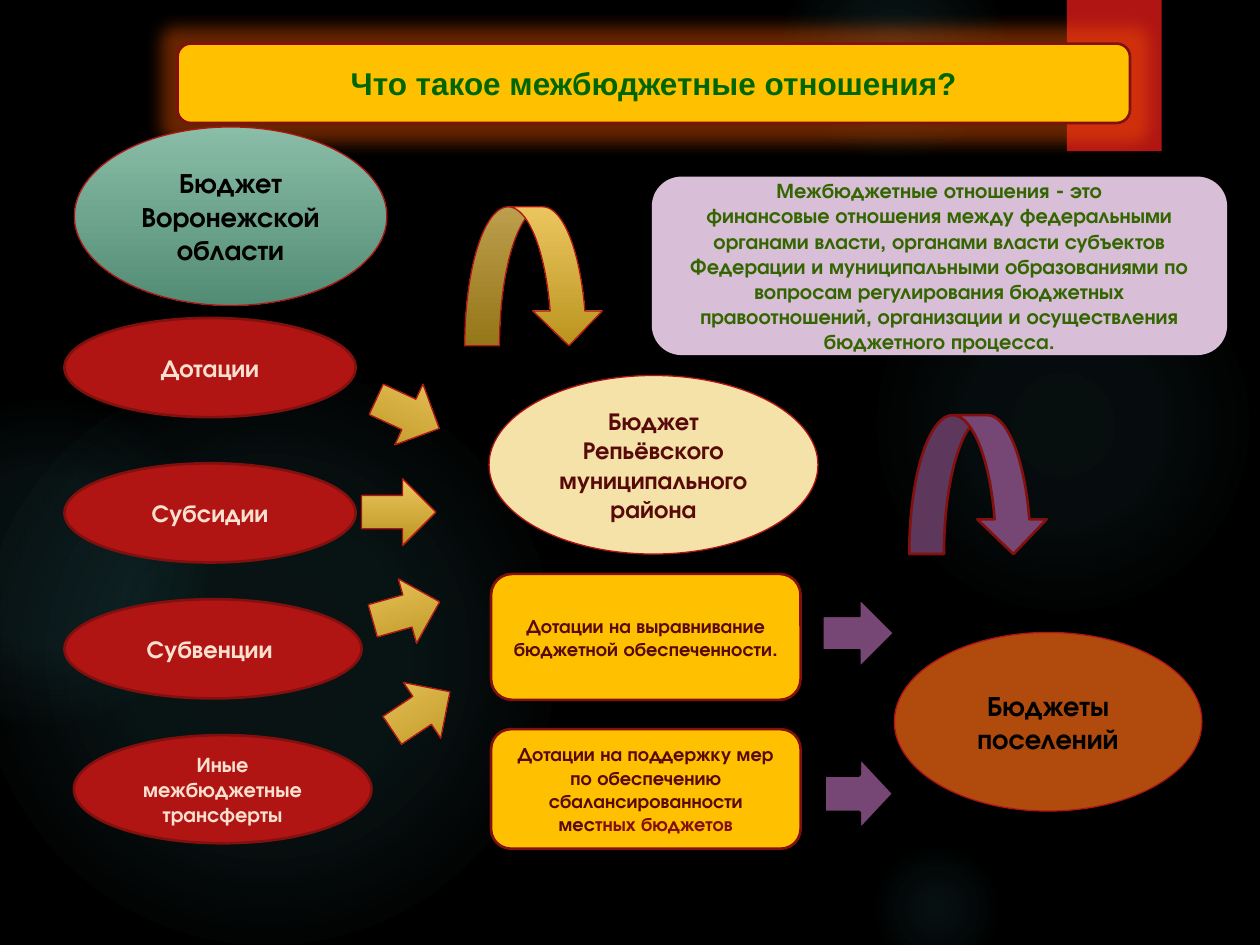
"""Build a slide that explains inter-budget relations."""
import dataclasses

import lxml.etree
import pptx
import pptx.dml.color
import pptx.enum.shapes
import pptx.enum.text
import pptx.oxml.ns
import pptx.util

Cm = pptx.util.Cm
Pt = pptx.util.Pt
SHAPE = pptx.enum.shapes.MSO_SHAPE
qn = pptx.oxml.ns.qn
NBSP = chr(160)


@dataclasses.dataclass(frozen=True)
class Theme:
    title_font: str = "Arial"
    body_font: str = "TeX Gyre Adventor"
    title_size: int = 18
    large: int = 16
    medium: int = 14
    small: int = 12
    tiny: int = 11
    thin: float = 0.75
    medium_line: float = 1.5
    thick: float = 2.25
    black: str = "000000"
    red: str = "B01513"
    dark_red: str = "82100E"
    amber: str = "FFC000"
    maroon: str = "580A09"
    accent_text: str = "84100E"
    title_text: str = "006600"
    definition_text: str = "336600"
    peach: str = "FBE0CF"
    cream: str = "F5E2A9"
    rust: str = "B04A0D"
    purple: str = "764674"
    lilac: str = "D9BED7"
    bubble: str = "50B9C1"
    glow: str = "FF5A00"
    green: tuple = ("89BDA7", "538C74")
    gold: tuple = ("EBC65F", "BB941F")


class Deck:
    def __init__(self, theme):
        self.t = theme
        self.prs = pptx.Presentation()
        self.prs.slide_width, self.prs.slide_height = Cm(25.4), Cm(19.05)
        self.s = self.prs.slides.add_slide(self.prs.slide_layouts[6])
        self.paint(self.s.background.fill, theme.black)

    @staticmethod
    def rgb(color):
        return pptx.dml.color.RGBColor.from_string(color)

    def paint(self, fill, color):
        if isinstance(color, tuple):
            fill.gradient()
            fill.gradient_angle = 270
            for stop, c in zip(fill.gradient_stops, color):
                stop.color.rgb = self.rgb(c)
        else:
            fill.solid()
            fill.fore_color.rgb = self.rgb(color)

    def shape(self, kind, box, fill, line=None, width=0, rotation=0):
        sp = self.s.shapes.add_shape(kind, *map(Cm, box))
        sp.shadow.inherit = False
        sp.rotation = rotation
        self.paint(sp.fill, fill)
        if line:
            sp.line.color.rgb = self.rgb(line)
            sp.line.width = Pt(width)
        else:
            sp.line.fill.background()
        return sp

    def alpha_color(self, parent, color, alpha):
        clr = lxml.etree.SubElement(parent, qn("a:srgbClr"), val=color)
        lxml.etree.SubElement(clr, qn("a:alpha"), val=str(alpha * 1000))

    def bubble(self, left, top, size, stops):
        sp = self.shape(SHAPE.OVAL, (left, top, size, size), (self.t.bubble,) * 2)
        grad = sp._element.spPr.find(qn("a:gradFill"))
        for child in list(grad):
            grad.remove(child)
        gs_list = lxml.etree.SubElement(grad, qn("a:gsLst"))
        for pos, alpha in stops:
            gs = lxml.etree.SubElement(gs_list, qn("a:gs"), pos=str(pos * 1000))
            self.alpha_color(gs, self.t.bubble, alpha)
        radial = lxml.etree.SubElement(grad, qn("a:path"), path="circle")
        lxml.etree.SubElement(radial, qn("a:fillToRect"), **dict.fromkeys("ltrb", "50000"))

    def label(self, sp, size, color, *texts, font=None):
        tf = sp.text_frame
        tf.word_wrap = True
        tf.vertical_anchor = pptx.enum.text.MSO_ANCHOR.MIDDLE
        p = tf.paragraphs[0]
        p.alignment = pptx.enum.text.PP_ALIGN.CENTER
        p.font.name = font or self.t.body_font
        p.font.size, p.font.bold = Pt(size), True
        p.font.color.rgb = self.rgb(color)
        for text in texts:
            r = p.add_run()
            r.text = text
        return p

    def title(self, box, text):
        sp = self.shape(SHAPE.ROUNDED_RECTANGLE, box, self.t.amber, self.t.dark_red, self.t.medium_line)
        effects = sp._element.spPr.find(qn("a:effectLst"))
        glow = lxml.etree.SubElement(effects, qn("a:glow"), rad=str(Cm(0.63)))
        self.alpha_color(glow, self.t.glow, 40)
        self.label(sp, self.t.title_size, self.t.title_text, text, font=self.t.title_font)

    def budget(self, box, fill, size, color, text):
        sp = self.shape(SHAPE.OVAL, box, fill, self.t.red, self.t.thin)
        self.label(sp, size, color, text)

    def transfer(self, box, size, text):
        sp = self.shape(SHAPE.OVAL, box, self.t.red, self.t.dark_red, self.t.medium_line)
        self.label(sp, size, self.t.peach, text)

    def grant(self, box, *texts):
        sp = self.shape(SHAPE.ROUNDED_RECTANGLE, box, self.t.amber, self.t.dark_red, self.t.medium_line)
        p = self.label(sp, self.t.tiny, self.t.maroon, *texts)
        for r in p.runs[1:]:
            r.font.color.rgb = self.rgb(self.t.accent_text)

    def definition(self, box, text):
        sp = self.shape(SHAPE.ROUNDED_RECTANGLE, box, self.t.lilac)
        self.label(sp, self.t.small, self.t.definition_text, text)


def main():
    t = Theme()
    d = Deck(t)
    for bubble in (
        (17.5, 4.65, 7.82, ((0, 7), (36, 6), (69, 0))),
        (15.8, -1.27, 4.45, ((0, 14), (36, 7), (73, 0))),
        (17.5, 16.94, 2.74, ((0, 9), (36, 5), (66, 0))),
        (-0.43, 7.42, 11.63, ((0, 11), (36, 10), (75, 0))),
        (-2.34, 8.05, 6.55, ((0, 8), (36, 8), (72, 0))),
    ):
        d.bubble(*bubble)
    d.shape(SHAPE.RECTANGLE, (21.51, 0, 1.91, 3.05), t.red)
    d.title((3.58, 0.88, 19.2, 1.6), "Что такое межбюджетные отношения?")

    d.budget((1.5, 2.56, 6.3, 3.6), t.green, t.large, t.black, "Бюджет Воронежской области")
    d.budget((9.86, 7.57, 6.63, 3.6), t.cream, t.medium, t.maroon,
             "Бюджет Репьёвского муниципального района")
    d.budget((18.03, 12.75, 6.2, 3.6), t.rust, t.large, t.black, "Бюджеты поселений")
    d.shape(SHAPE.CURVED_DOWN_ARROW, (9.37, 4.17, 2.8, 2.8), t.gold, t.red, t.thin)
    d.shape(SHAPE.CURVED_DOWN_ARROW, (18.33, 8.37, 2.8, 2.8), t.purple, t.dark_red, t.medium_line)
    linked = NBSP.join(("финансовые", "отношения", "между"))
    d.definition((13.14, 3.56, 11.6, 3.6),
                 f"Межбюджетные отношения - это {linked} федеральными "
                 "органами власти, органами власти субъектов Федерации и муниципальными "
                 "образованиями по вопросам регулирования бюджетных правоотношений, "
                 "организации и осуществления бюджетного процесса.")

    for box, size, text in (
        ((1.3, 6.41, 5.87, 2), t.medium, "Дотации"),
        ((1.3, 9.34, 5.87, 2), t.medium, "Субсидии"),
        ((1.3, 12.08, 5.99, 2), t.medium, "Субвенции "),
        ((1.49, 14.82, 6, 2.18), t.small, "Иные межбюджетные трансферты"),
    ):
        d.transfer(box, size, text)
    for left, top, width, rotation in (
        (7.52, 7.67, 1.4, 24.8),
        (7.29, 9.65, 1.5, 0),
        (7.49, 11.65, 1.4, 344.2),
        (7.79, 13.66, 1.4, 326.2),
    ):
        d.shape(SHAPE.RIGHT_ARROW, (left, top, width, 1.35), t.gold, t.red, t.thin, rotation)

    d.shape(SHAPE.RIGHT_ARROW, (16.59, 12.09, 1.42, 1.35), t.purple, t.black, t.thin)
    d.shape(SHAPE.RIGHT_ARROW, (16.61, 15.24, 1.42, 1.52), t.purple, t.black, t.thick)
    d.grant((9.9, 11.57, 6.24, 2.54), "Дотации на выравнивание бюджетной обеспеченности.")
    d.grant((9.9, 14.7, 6.24, 2.41),
            "Дотации на поддержку мер по обеспечению сбалансированности мес", "тных бюджетов")
    d.prs.save("out.pptx")


if __name__ == "__main__":
    main()
